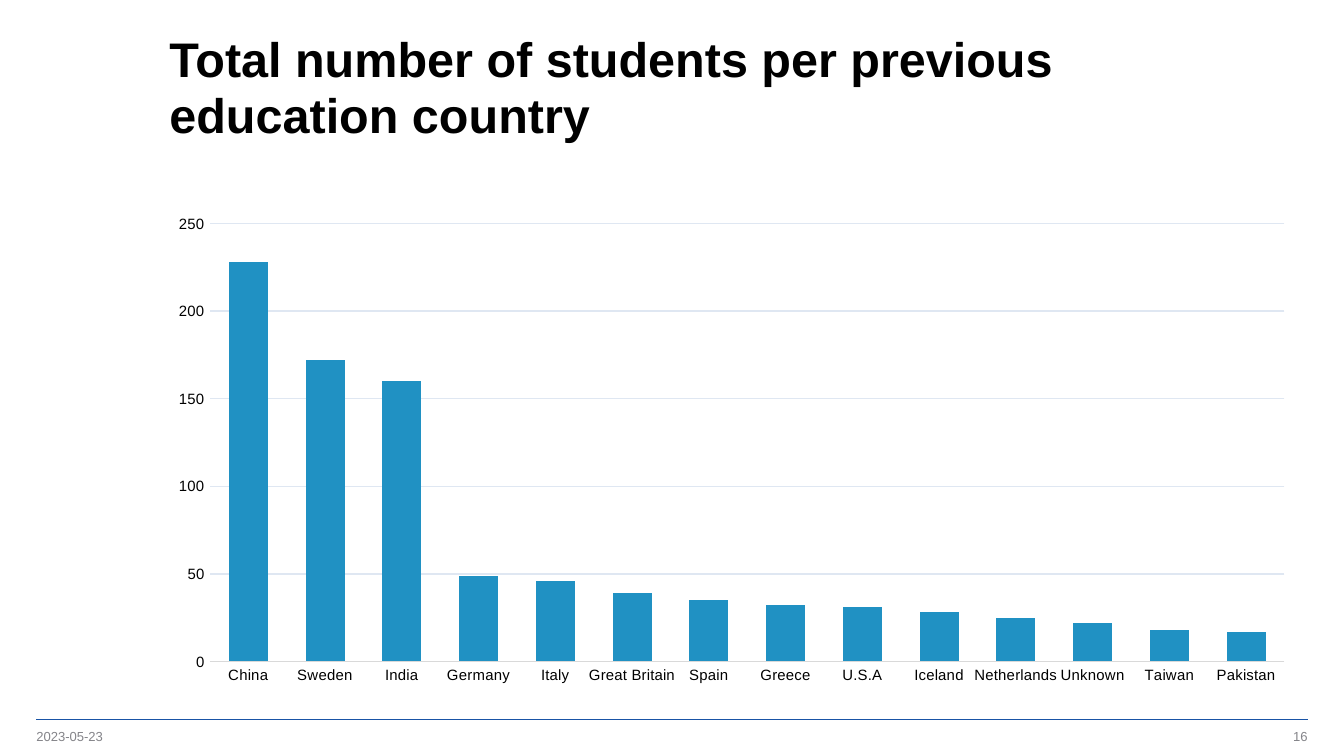
"""Build a slide with a column chart of students per previous education country."""
from lxml import etree
from pptx import Presentation
from pptx.chart.data import CategoryChartData
from pptx.dml.color import RGBColor
from pptx.enum.chart import XL_CHART_TYPE, XL_TICK_MARK
from pptx.enum.shapes import MSO_CONNECTOR
from pptx.enum.text import MSO_ANCHOR, MSO_AUTO_SIZE, PP_ALIGN
from pptx.oxml.ns import qn
from pptx.util import Pt

TITLE = "Total number of students per previous education country"
STUDENTS = [
    ("China", 228), ("Sweden", 172), ("India", 160), ("Germany", 49),
    ("Italy", 46), ("Great Britain", 39), ("Spain", 35), ("Greece", 32),
    ("U.S.A", 31), ("Iceland", 28), ("Netherlands", 25), ("Unknown", 22),
    ("Taiwan", 18), ("Pakistan", 17),
]
FOOTERS = [("2023-05-23", PP_ALIGN.LEFT), ("16", PP_ALIGN.RIGHT)]
COLORS = {"text": "000000", "footer": "848489", "rule": "1954A6",
          "bar": "2091C3", "axis": "D9D9D9", "grid": "DFE7F2"}
FONT = "Arial"
WIDTH, HEIGHT = 720, 405
MARGIN, LEFT = 19.5, 83.5
FOOTER_W = 162


def color(name):
    return RGBColor.from_string(COLORS[name])


def set_font(font, size, name="text", bold=False):
    font.name, font.size, font.bold = FONT, Pt(size), bold
    font.color.rgb = color(name)


def set_line(line, name, width):
    line.color.rgb = color(name)
    line.width = Pt(width)


def add_title(s):
    title = s.shapes.title
    title.left, title.top, title.width, title.height = map(Pt, (LEFT, 20, 595, 53.5))
    tf = title.text_frame
    tf.text = TITLE
    tf.word_wrap = True
    tf.auto_size = MSO_AUTO_SIZE.NONE
    tf.vertical_anchor = MSO_ANCHOR.MIDDLE
    p = tf.paragraphs[0]
    p.alignment = PP_ALIGN.LEFT
    p.line_spacing = Pt(30)
    set_font(p.font, 26, bold=True)


def add_footer(s):
    rule = s.shapes.add_connector(
        MSO_CONNECTOR.STRAIGHT, Pt(MARGIN), Pt(385.5), Pt(WIDTH - MARGIN), Pt(385.5))
    set_line(rule.line, "rule", 1)
    etree.SubElement(rule.element.spPr, qn("a:effectLst"))
    for i, (text, align) in enumerate(FOOTERS):
        left = MARGIN + i * (WIDTH - 2 * MARGIN - FOOTER_W)
        tf = s.shapes.add_textbox(Pt(left), Pt(389.5), Pt(FOOTER_W), Pt(9.5)).text_frame
        tf.margin_left = tf.margin_right = tf.margin_top = tf.margin_bottom = 0
        tf.word_wrap = False
        tf.vertical_anchor = MSO_ANCHOR.MIDDLE
        p = tf.paragraphs[0]
        p.text, p.alignment = text, align
        set_font(p.font, 7, "footer")


def add_student_chart(s):
    data = CategoryChartData()
    data.categories = [country for country, _ in STUDENTS]
    data.add_series("Series 1", [count for _, count in STUDENTS])
    chart = s.shapes.add_chart(
        XL_CHART_TYPE.COLUMN_CLUSTERED, Pt(LEFT), Pt(110),
        Pt(WIDTH - MARGIN - LEFT), Pt(261.5), data).chart
    chart.has_title = chart.has_legend = False
    set_font(chart.font, 10)
    plot = chart.plots[0]
    plot.gap_width, plot.overlap, plot.vary_by_categories = 97, -27, False
    fill = plot.series[0].format.fill
    fill.solid()
    fill.fore_color.rgb = color("bar")
    cat, val = chart.category_axis, chart.value_axis
    for axis in (cat, val):
        axis.major_tick_mark = axis.minor_tick_mark = XL_TICK_MARK.NONE
        set_font(axis.tick_labels.font, 8)
    set_line(cat.format.line, "axis", 0.75)
    val.format.line.fill.background()
    val.minimum_scale, val.maximum_scale, val.major_unit = 0, 250, 50
    set_line(val.major_gridlines.format.line, "grid", 0.75)


def main():
    prs = Presentation()
    prs.slide_width, prs.slide_height = Pt(WIDTH), Pt(HEIGHT)
    s = prs.slides.add_slide(prs.slide_layouts[5])
    add_title(s)
    add_footer(s)
    add_student_chart(s)
    prs.save("out.pptx")


if __name__ == "__main__":
    main()
